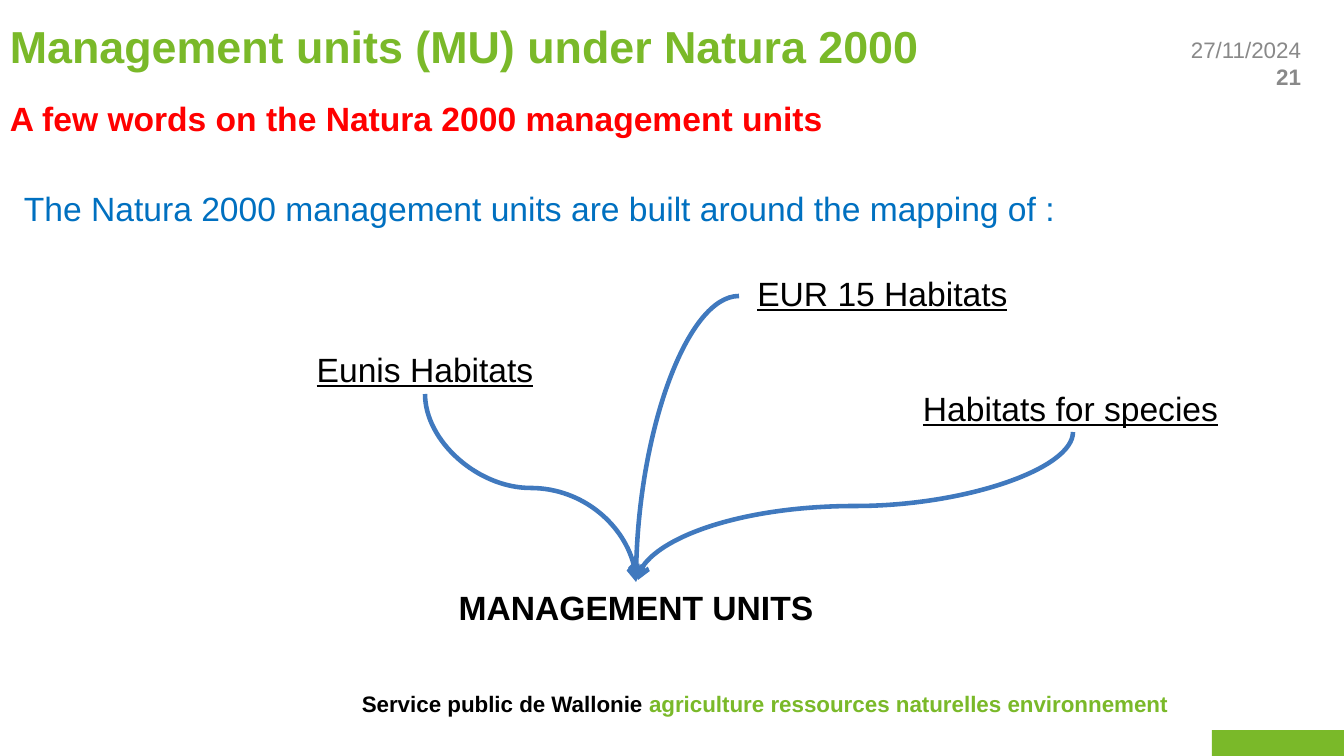
"""Build the slide on Natura 2000 management units."""
from pptx import Presentation
from pptx.dml.color import RGBColor
from pptx.enum.shapes import MSO_CONNECTOR as Connector, MSO_SHAPE as Shape
from pptx.enum.text import MSO_ANCHOR as Anchor, PP_ALIGN as Align
from pptx.oxml.ns import qn
from pptx.util import Pt
from lxml.etree import SubElement

GREEN, BLACK, GREY, RED, BLUE = "7AB929", "000000", "898989", "FF0000", "0070C0"
CURVE_BLUE = "4079BE"

TITLE = "Management units (MU) under Natura 2000"
SUBTITLE = "A few words on the Natura 2000 management units"
INTRO = "The Natura 2000 management units are built around the mapping of :"
TARGET = "MANAGEMENT UNITS"
DATE, NUMBER = "27/11/2024", "21"
SERVICE = "Service public de Wallonie "
DEPARTMENT = "agriculture ressources naturelles environnement"

HABITATS = [
    ("Eunis Habitats", (286, 344, 278, 50)),
    ("EUR 15 Habitats", (708, 268, 349, 50)),
    ("Habitats for species", (882, 383, 377, 50)),
]
CURVES = [
    ((425, 394), (636, 582), "curvedConnector3", 270, "flipH"),
    ((1073, 432), (638, 580), "curvedConnector3", 90, None),
    ((739, 296), (636, 580), "curvedConnector2", 180, "flipV"),
]


def px(length):
    return round(length * 914400 / 100.8)


def color(code):
    return RGBColor.from_string(code)


def add_text(paragraphs, box, size=24, align=Align.LEFT, anchor=Anchor.TOP, underline=False):
    frame = slide.shapes.add_textbox(*map(px, box)).text_frame
    frame.word_wrap = True
    frame.vertical_anchor = anchor
    for index, runs in enumerate(paragraphs):
        paragraph = frame.add_paragraph() if index else frame.paragraphs[0]
        paragraph.alignment = align
        for words, code, bold in runs:
            run = paragraph.add_run()
            run.text = words
            run.font.name = "Arial"
            run.font.size = Pt(size)
            run.font.bold = bold
            run.font.underline = underline
            run.font.color.rgb = color(code)


def add_curve(start, end, preset, rotation, flip):
    width, height = (abs(b - a) for a, b in zip(start, end))
    if rotation % 180:
        width, height = height, width
    left = (start[0] + end[0] - width) / 2
    top = (start[1] + end[1] - height) / 2
    curve = slide.shapes.add_connector(
        Connector.CURVE, px(left), px(top), px(left + width), px(top + height))
    curve.line.color.rgb = color(CURVE_BLUE)
    curve.line.width = Pt(3.25)
    properties = curve._element.spPr
    properties.find(qn("a:prstGeom")).set("prst", preset)
    transform = properties.find(qn("a:xfrm"))
    transform.set("rot", str(rotation * 60000))
    if flip:
        transform.set(flip, "1")
    SubElement(properties.find(qn("a:ln")), qn("a:tailEnd"), type="arrow")
    SubElement(properties, qn("a:effectLst"))


deck = Presentation()
deck.slide_width, deck.slide_height = px(1344), px(756)
slide = deck.slides.add_slide(deck.slide_layouts[6])

add_text([[(DATE, GREY, False)], [(NUMBER, GREY, True)]], (1047, 31, 264, 80),
         size=16, align=Align.RIGHT)
corner = slide.shapes.add_shape(Shape.RECTANGLE, *map(px, (1212, 730, 132, 26)))
corner.shadow.inherit = False
corner.fill.solid()
corner.fill.fore_color.rgb = color(GREEN)
corner.line.fill.background()
add_text([[(SERVICE, BLACK, True), (DEPARTMENT, GREEN, True)]], (0, 685, 1178, 37),
         size=16, align=Align.RIGHT, anchor=Anchor.MIDDLE)

for habitat, box in HABITATS:
    add_text([[(habitat, BLACK, False)]], box, align=Align.CENTER, underline=True)
add_text([[(TARGET, BLACK, True)]], (342, 582, 588, 50), align=Align.CENTER)
for curve_data in CURVES:
    add_curve(*curve_data)

add_text([[(INTRO, BLUE, False)]], (14, 183, 1286, 50))
add_text([[(SUBTITLE, RED, True)]], (0, 93, 1110, 50), anchor=Anchor.MIDDLE)
add_text([[(TITLE, GREEN, True)]], (0, 14, 1185, 65), size=32)

deck.save("out.pptx")
